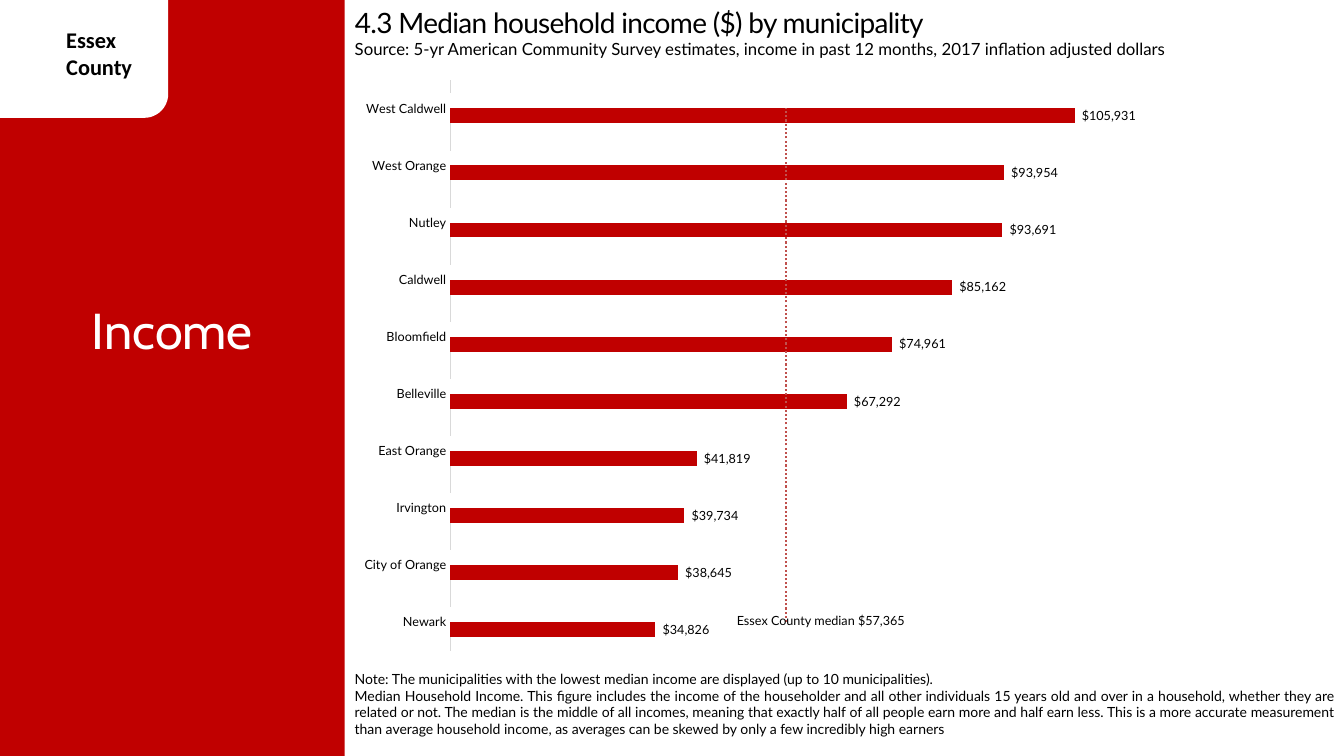
from lxml import etree
from pptx import Presentation
from pptx import util as u
from pptx.chart.data import CategoryChartData
from pptx.dml.color import RGBColor
from pptx.enum import chart as ch, shapes, text
from pptx.oxml import parse_xml
from pptx.oxml.ns import nsdecls, qn

RED = RGBColor(0xC0, 0x00, 0x00)
WHITE = RGBColor(0xFF, 0xFF, 0xFF)
BLACK = RGBColor(0x00, 0x00, 0x00)
GREY = RGBColor(0xD9, 0xD9, 0xD9)
ALIGN = text.PP_ALIGN

SIDE = 8.69  # width of the red panel
MONEY = '_("$"* #,##0_);_("$"* \\(#,##0\\)'
MEDIAN = 57000
INCOMES = {
    "Newark": 34826,
    "City of Orange": 38645,
    "Irvington": 39734,
    "East Orange": 41819,
    "Belleville": 67292,
    "Bloomfield": 74961,
    "Caldwell": 85162,
    "Nutley": 93691,
    "West Orange": 93954,
    "West Caldwell": 105931,
}
NOTES = [
    "Note: The municipalities with the lowest median income are displayed "
    "(up to 10 municipalities).",
    "Median Household Income. This figure includes the income of the "
    "householder and all other individuals 15 years old and over in a "
    "household, whether they are related or not. The median is the middle of "
    "all incomes, meaning that exactly half of all people earn more and half "
    "earn less. This is a more accurate measurement than average household "
    "income, as averages can be skewed by only a few incredibly high earners",
]


class Page:
    """Holds the text style and the current slide."""

    face = "Lato"

    def __init__(self, deck):
        self.slide = deck.slides.add_slide(deck.slide_layouts[5])
        self.shapes = self.slide.shapes

    def style(self, font, size, color=BLACK, face=None, bold=False):
        font.name = face or self.face
        font.size = u.Pt(size)
        font.color.rgb = color
        font.bold = bold

    def block(self, kind, box, color):
        item = self.shapes.add_shape(kind, *map(u.Cm, box))
        item.shadow.inherit = False
        item.fill.solid()
        item.fill.fore_color.rgb = color
        item.line.fill.background()

    def fill(self, item, lines, size, align=ALIGN.LEFT, **look):
        """Set and format the text of a shape."""
        frame = item.text_frame
        frame.word_wrap = True
        frame.auto_size = text.MSO_AUTO_SIZE.NONE
        frame.vertical_anchor = text.MSO_ANCHOR.TOP
        frame.text = "\n".join(lines)
        for para in frame.paragraphs:
            para.alignment = align
            self.style(para.font, size, **look)
        return frame

    def label(self, box, lines, size, **look):
        item = self.shapes.add_textbox(*map(u.Cm, box))
        return self.fill(item, lines, size, **look)

    def title(self, box, line, size):
        item = self.shapes.title
        item.left, item.top, item.width, item.height = map(u.Cm, box)
        frame = self.fill(item, [line], size)
        run = frame.paragraphs[0].runs[0]
        run._r.get_or_add_rPr().set("spc", "-50")

    def bars(self, box):
        data = CategoryChartData(number_format=MONEY)
        data.categories = list(INCOMES)
        data.add_series("Median Household Income", list(INCOMES.values()))
        data.add_series("Series 2", [MEDIAN] * len(INCOMES))
        chart = self.shapes.add_chart(
            ch.XL_CHART_TYPE.BAR_CLUSTERED, *map(u.Cm, box), data).chart
        chart.has_title = False
        chart.has_legend = False
        self.style(chart.font, 9)

        plot = chart.plots[0]
        plot.gap_width = 182
        plot.overlap = 0
        plot.vary_by_categories = False
        for row, color in zip(plot.series, (RED, WHITE)):
            row.invert_if_negative = False
            row.format.fill.solid()
            row.format.fill.fore_color.rgb = color

        income, median = plot.series
        tags = income.data_labels
        tags.show_value = True
        tags.position = ch.XL_LABEL_POSITION.OUTSIDE_END
        tags.number_format = MONEY
        tags.number_format_is_linked = False
        self.style(tags.font, 9)
        self.trend(median)

        names = chart.category_axis
        names.major_tick_mark = ch.XL_TICK_MARK.NONE
        names.format.line.color.rgb = GREY
        names.format.line.width = u.Pt(0.75)
        self.style(names.tick_labels.font, 9)
        scale = chart.value_axis
        scale.minimum_scale = 0
        scale.maximum_scale = 120000
        scale.has_major_gridlines = False
        scale.visible = False
        self.place(chart, x=0.106, y=0.026, w=0.712, h=0.974)

    def trend(self, row):
        """Add a dotted linear trend line to a series."""
        line = parse_xml(
            f'<c:trendline {nsdecls("c", "a")}><c:spPr><a:ln w="19050">'
            '<a:solidFill><a:srgbClr val="C0504D"/></a:solidFill>'
            '<a:prstDash val="sysDot"/></a:ln></c:spPr>'
            '<c:trendlineType val="linear"/><c:dispRSqr val="0"/>'
            '<c:dispEq val="0"/></c:trendline>')
        row._element.find(qn("c:cat")).addprevious(line)

    def place(self, chart, **parts):
        """Fix the inner plot area as shares of the chart."""
        area = chart._chartSpace.chart.plotArea
        for old in area.findall(qn("c:layout")):
            area.remove(old)
        layout = etree.Element(qn("c:layout"))
        manual = etree.SubElement(layout, qn("c:manualLayout"))
        rules = {"layoutTarget": "inner", "xMode": "edge", "yMode": "edge"}
        for key, val in {**rules, **parts}.items():
            etree.SubElement(manual, qn("c:" + key)).set("val", str(val))
        area.insert(0, layout)


def main():
    deck = Presentation()
    deck.slide_width, deck.slide_height = u.Cm(33.87), u.Cm(19.05)
    page = Page(deck)
    kind = shapes.MSO_SHAPE
    page.block(kind.RECTANGLE, (0, 0, SIDE, 19.05), RED)
    page.block(kind.ROUNDED_RECTANGLE, (-0.84, -0.64, 5.08, 3.61), WHITE)
    page.label((1.42, 0.53, 2.82, 1.63), ["Essex County"], 16,
               face="Calibri", bold=True)
    page.label((0, 7.42, SIDE, 1.8), ["Income"], 36, align=ALIGN.CENTER,
               face="Cabin", color=WHITE)
    page.title((SIDE, 0, 25.04, 1.12),
               "4.3 Median household income ($) by municipality", 20)
    page.label((SIDE, 0.84, 23.34, 0.76),
               ["Source: 5-yr American Community Survey estimates, income in "
                "past 12 months, 2017 inflation adjusted dollars"], 12)
    page.bars((SIDE, 1.63, 25.04, 14.78))
    page.label((18.32, 15.32, 5, 0.64), ["Essex County median $57,365"], 9)
    notes = page.label((SIDE, 16.89, 25.18, 2.16), NOTES, 10,
                       align=ALIGN.JUSTIFY)
    notes.margin_top = 0
    deck.save("out.pptx")


if __name__ == "__main__":
    main()
